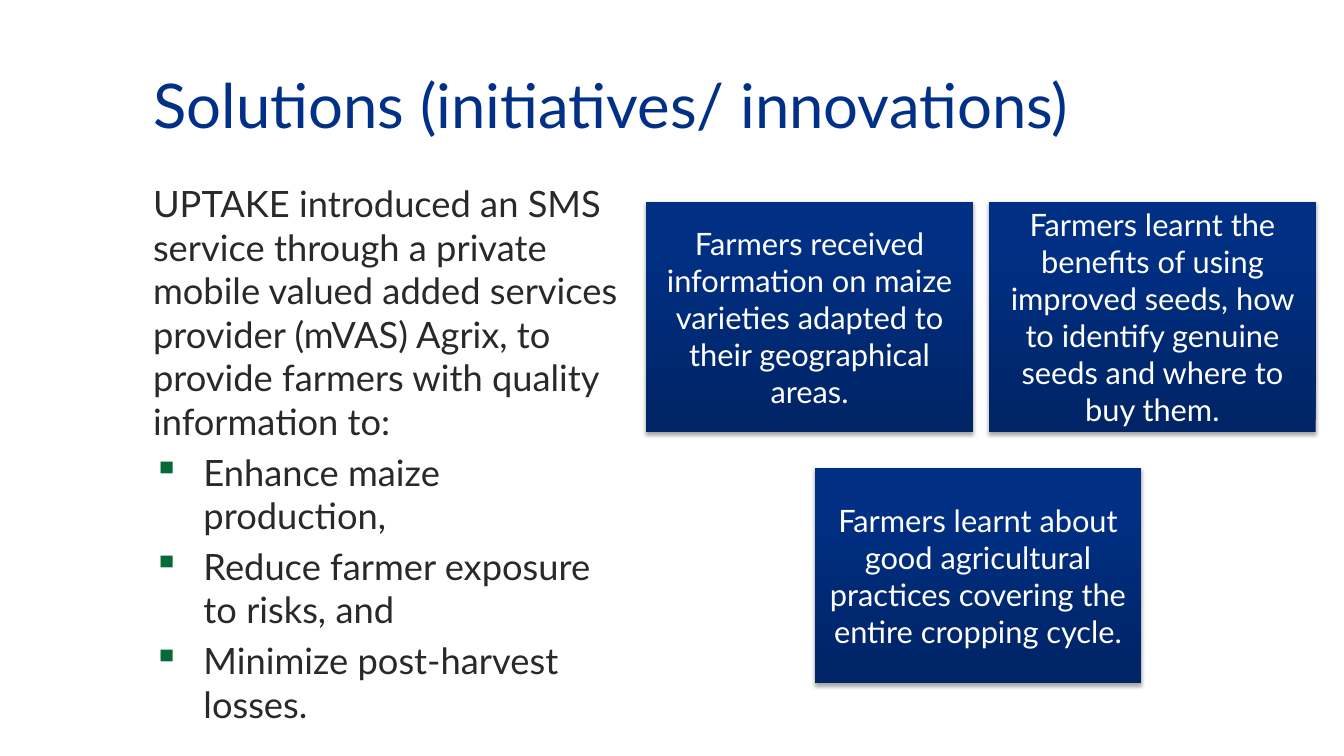
from lxml import etree
from pptx import Presentation
from pptx.dml import color
from pptx.enum import shapes, text
from pptx.oxml import ns
from pptx.util import Inches, Pt

NAVY, DEEP, ROYAL = "003087", "002465", "002F83"
INK, GREEN, WHITE = "292929", "046A38", "FFFFFF"

INTRO = ("UPTAKE introduced an SMS service through a private mobile valued "
         "added services provider (mVAS) Agrix, to provide farmers with "
         "quality information to:")
GOALS = ["Enhance maize production,",
         "Reduce farmer exposure to risks, and",
         "Minimize post-harvest losses."]
CARDS = [
    ((6.41, 2, 3.24, 2.29),
     "Farmers received information on maize varieties adapted to their "
     "geographical areas."),
    ((9.81, 2, 3.24, 2.29),
     "Farmers learnt the benefits of using improved seeds, how to identify "
     "genuine seeds and where to buy them."),
    ((8.08, 4.64, 3.24, 2.14),
     "Farmers learnt about good agricultural practices covering the entire "
     "cropping cycle."),
]


def rgb(code):
    return color.RGBColor.from_string(code)


def assign(item, values):
    """Set each named attribute on the item."""
    for name, value in values.items():
        setattr(item, name, value)


def sub(parent, tag, **attrs):
    """Append a DrawingML element with the given attributes."""
    node = etree.SubElement(parent, ns.qn("a:" + tag))
    for name, value in attrs.items():
        node.set(name, str(value))
    return node


class Deck:
    def __init__(self, face):
        self.face = face
        self.deck = Presentation()
        assign(self.deck, {"slide_width": Inches(13.33),
                           "slide_height": Inches(7.5)})
        self.slide = self.deck.slides.add_slide(self.deck.slide_layouts[5])

    def frame(self, shape, anchor, side, edge):
        """Wrap, anchor and inset the text of a shape."""
        box = shape.text_frame
        assign(box, {"word_wrap": True, "auto_size": text.MSO_AUTO_SIZE.NONE,
                     "vertical_anchor": anchor,
                     "margin_left": Inches(side), "margin_right": Inches(side),
                     "margin_top": Inches(edge), "margin_bottom": Inches(edge)})
        return box

    def label(self, para, words, size, tint, align=text.PP_ALIGN.LEFT):
        para.text = words
        para.alignment = align
        assign(para.runs[0].font, {"name": self.face, "size": Pt(size)})
        para.runs[0].font.color.rgb = rgb(tint)

    def title(self, area, words):
        head = self.slide.shapes.title
        sides = ("left", "top", "width", "height")
        assign(head, dict(zip(sides, map(Inches, area))))
        box = self.frame(head, text.MSO_ANCHOR.MIDDLE, 0.1, 0.05)
        self.label(box.paragraphs[0], words, 44, NAVY)

    def bullet(self, para):
        props = para._p.get_or_add_pPr()
        props.set("marL", str(Inches(0.5)))
        props.set("indent", str(Inches(-0.5)))
        sub(sub(props, "buClr"), "srgbClr", val=GREEN)
        sub(props, "buChar", char="▪")

    def body(self, area, intro, goals):
        shape = self.slide.shapes.add_textbox(*map(Inches, area))
        box = self.frame(shape, text.MSO_ANCHOR.TOP, 0.1, 0.05)
        self.label(box.paragraphs[0], intro, 25.9, INK)
        for goal in goals:
            para = box.add_paragraph()
            self.bullet(para)
            para.space_before = Pt(5.2)
            self.label(para, goal, 25.9, INK)

    def shade(self, shape):
        """Give the shape a soft shadow below it."""
        shape.shadow.inherit = False
        effects = shape._element.spPr.find(ns.qn("a:effectLst"))
        drop = sub(effects, "outerShdw", blurRad=Pt(3.1), dist=Pt(1.8),
                   dir=90 * 60000, rotWithShape=0)
        sub(sub(drop, "srgbClr", val="000000"), "alpha", val=35000)

    def card(self, area, words):
        shape = self.slide.shapes.add_shape(
            shapes.MSO_SHAPE.RECTANGLE, *map(Inches, area))
        shape.fill.gradient()
        shape.fill.gradient_angle = 90
        stops = ((0, DEEP), (0.8, ROYAL))
        for stop, (place, tint) in zip(shape.fill.gradient_stops, stops):
            stop.position = place
            stop.color.rgb = rgb(tint)
        shape.line.fill.background()
        self.shade(shape)
        box = self.frame(shape, text.MSO_ANCHOR.MIDDLE, 0.09, 0.09)
        self.label(box.paragraphs[0], words, 22, WHITE, text.PP_ALIGN.CENTER)


def main():
    page = Deck("Lato")
    page.title((1.42, 0.52, 11.25, 1.03), "Solutions (initiatives/ innovations)")
    page.body((1.42, 1.75, 4.83, 4.95), INTRO, GOALS)
    for area, words in CARDS:
        page.card(area, words)
    page.deck.save("out.pptx")


if __name__ == "__main__":
    main()
